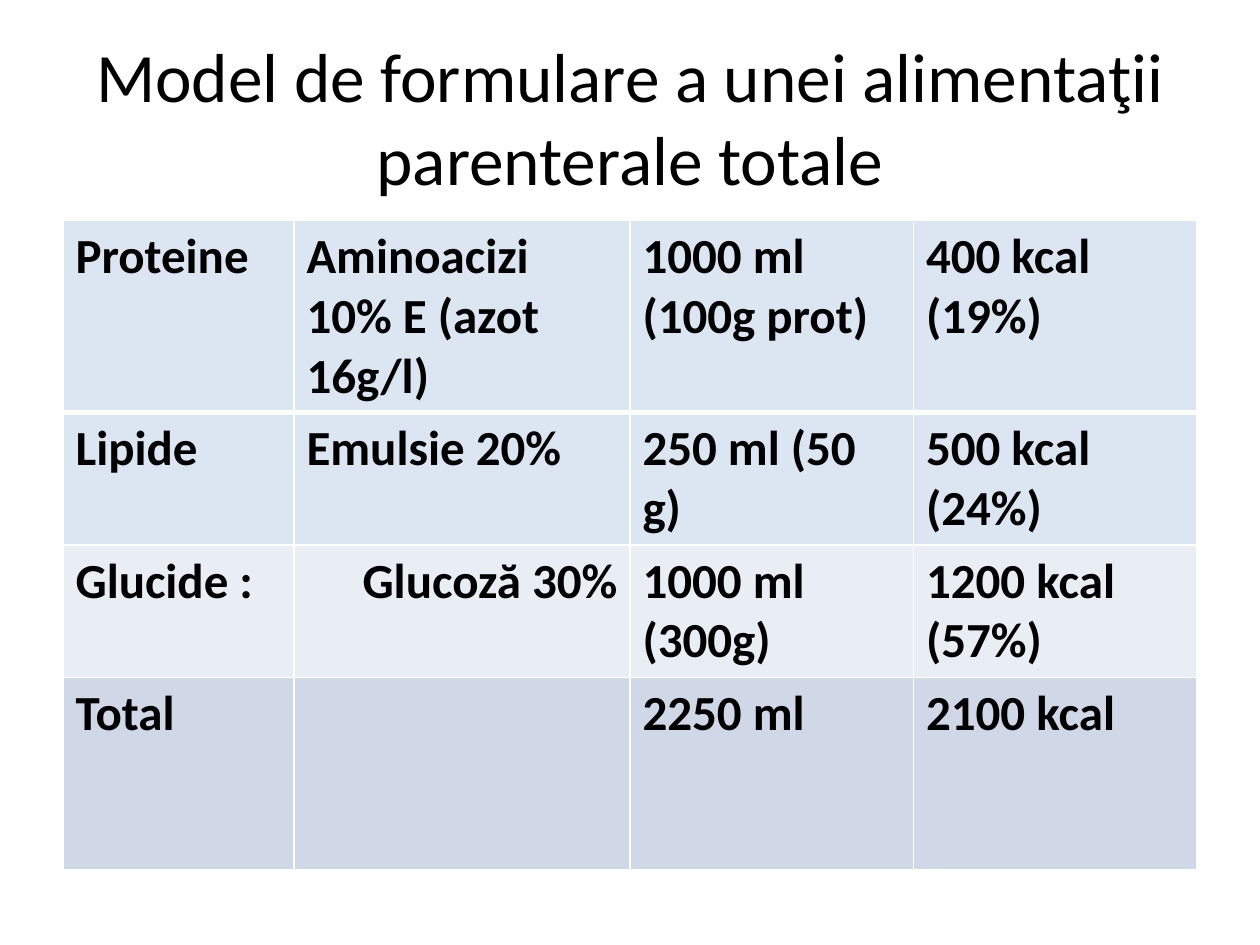
from dataclasses import dataclass

import pptx
import pptx.dml.color
import pptx.enum.text
import pptx.oxml.ns
import pptx.presentation
import pptx.slide
import pptx.table
import pptx.util
from lxml import etree

Pt = pptx.util.Pt
Align = pptx.enum.text.PP_ALIGN
FONT = "Calibri"
COLORS = {
    "text": "000000",
    "border": "FFFFFF",
    "nutrient": "DCE6F2",
    "glucide": "E9EDF4",
    "total": "D0D8E8",
}
COLUMN_WIDTHS = (132, 192, 162, 162)
TALL_ROW, SHORT_ROW = 109.6, 75.6


@dataclass(frozen=True)
class NutritionRow:
    texts: tuple[str, str, str, str]
    fill: str
    height: float
    product_align: Align = Align.LEFT


ROWS = (
    NutritionRow(("Proteine", "Aminoacizi 10% E (azot 16g/l)", "1000 ml (100g prot)",
                  "400 kcal (19%)"), "nutrient", TALL_ROW),
    NutritionRow(("Lipide", "Emulsie 20%", "250 ml (50 g)", "500 kcal (24%)"),
                 "nutrient", SHORT_ROW),
    NutritionRow(("Glucide :", "Glucoză 30%", "1000 ml (300g)", "1200 kcal (57%)"),
                 "glucide", SHORT_ROW, Align.RIGHT),
    NutritionRow(("Total", "", "2250 ml", "2100 kcal"), "total", TALL_ROW),
)


def rgb(name: str) -> pptx.dml.color.RGBColor:
    return pptx.dml.color.RGBColor.from_string(COLORS[name])


def write_text(frame, text: str, size: float, bold: bool, align: Align) -> None:
    paragraph = frame.paragraphs[0]
    paragraph.alignment = align
    run = paragraph.add_run()
    run.text = text
    run.font.name = FONT
    run.font.size = Pt(size)
    run.font.bold = bold
    run.font.color.rgb = rgb("text")


def set_borders(cell: pptx.table._Cell, widths: dict[str, float]) -> None:
    """Draw the given sides; the lines must come before the fill in the XML."""
    properties = cell._tc.get_or_add_tcPr()
    qn = pptx.oxml.ns.qn
    for index, (side, width) in enumerate(widths.items()):
        line = etree.Element(qn(f"a:ln{side}"), w=str(Pt(width)))
        fill = etree.SubElement(line, qn("a:solidFill"))
        etree.SubElement(fill, qn("a:srgbClr"), val=COLORS["border"])
        properties.insert(index, line)


def add_title(slide: pptx.slide.Slide, text: str) -> None:
    title = slide.shapes.title
    title.left, title.top, title.width, title.height = Pt(36), Pt(21.6), Pt(648), Pt(90)
    title.text_frame.vertical_anchor = pptx.enum.text.MSO_ANCHOR.MIDDLE
    write_text(title.text_frame, text, 39.6, False, Align.CENTER)


def add_nutrition_table(slide: pptx.slide.Slide, rows: tuple[NutritionRow, ...]) -> None:
    table = slide.shapes.add_table(
        len(rows), len(COLUMN_WIDTHS), Pt(36), Pt(126),
        Pt(sum(COLUMN_WIDTHS)), Pt(sum(row.height for row in rows))).table
    for column, width in zip(table.columns, COLUMN_WIDTHS):
        column.width = Pt(width)
    for row_index, row in enumerate(rows):
        table.rows[row_index].height = Pt(row.height)
        borders = {"L": 1, "R": 1,
                   "T": 3 if row_index == 1 else 1,
                   "B": 3 if row_index == 0 else 1}
        for column_index, text in enumerate(row.texts):
            cell = table.cell(row_index, column_index)
            cell.fill.solid()
            cell.fill.fore_color.rgb = rgb(row.fill)
            set_borders(cell, borders)
            if text:
                align = row.product_align if column_index == 1 else Align.LEFT
                write_text(cell.text_frame, text, 28, True, align)


def main() -> None:
    presentation = pptx.Presentation()
    presentation.slide_width, presentation.slide_height = Pt(720), Pt(540)
    slide = presentation.slides.add_slide(presentation.slide_layouts[5])
    add_title(slide, "Model de formulare a unei alimentaţii parenterale totale")
    add_nutrition_table(slide, ROWS)
    presentation.save("out.pptx")


if __name__ == "__main__":
    main()
